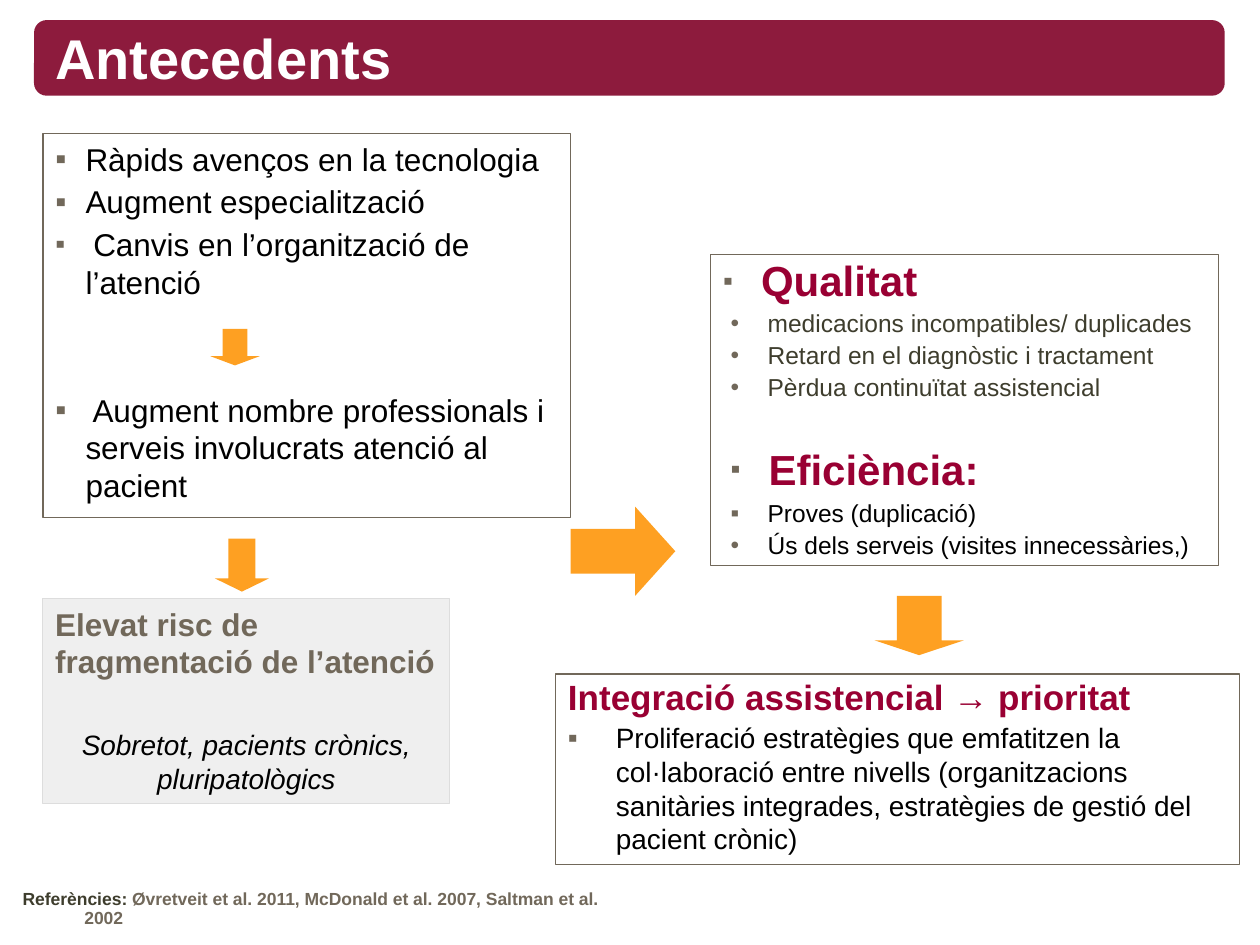
from lxml import etree
from pptx import Presentation
from pptx import util as u
from pptx.dml import color
from pptx.enum import shapes, text
from pptx.oxml import ns

COLORS = {
    "wine": "8D1B3D", "crimson": "990033", "taupe": "71685A", "olive": "3E3D2D",
    "orange": "FEA022", "silver": "C0C0C0", "pale": "DDDDDD",
    "black": "000000", "white": "FFFFFF",
}
COLUMNS, ROWS = 100, 75
CELL = u.Inches(0.1)
SQUARE, DOT = "▪", "•"


def cells(count):
    return u.Emu(round(count * CELL))


def rgb(name):
    return color.RGBColor.from_string(COLORS[name])


def add_panel(page, box, kind=shapes.MSO_SHAPE.RECTANGLE, fill=None, line=None, adjust=()):
    panel = page.shapes.add_shape(kind, *map(cells, box))
    panel.shadow.inherit = False
    for index, value in enumerate(adjust):
        panel.adjustments[index] = value
    if fill:
        panel.fill.solid()
        panel.fill.fore_color.rgb = rgb(fill)
    else:
        panel.fill.background()
    if line:
        panel.line.color.rgb = rgb(line)
        panel.line.width = u.Pt(0.75)
    else:
        panel.line.fill.background()
    panel.text_frame.word_wrap = True
    panel.text_frame.vertical_anchor = text.MSO_ANCHOR.TOP
    return panel


def add_text_box(page, box, anchor):
    frame = page.shapes.add_textbox(*map(cells, box)).text_frame
    frame.word_wrap = True
    frame.vertical_anchor = anchor
    return frame


def add_para(frame, spans, size, bold=False, italic=False, before=0, spacing=None,
             bullet=None, margin=0, hang=0, align=text.PP_ALIGN.LEFT):
    first = frame.paragraphs[0]
    para = frame.add_paragraph() if first.runs else first
    para.alignment = align
    para.space_before = u.Pt(before)
    if spacing:
        para.line_spacing = spacing
    props = para._p.get_or_add_pPr()
    props.set("marL", str(cells(margin)))
    props.set("indent", str(-cells(hang)))
    if bullet:
        tint = etree.SubElement(props, ns.qn("a:buClr"))
        etree.SubElement(tint, ns.qn("a:srgbClr"), val=COLORS["taupe"])
        etree.SubElement(props, ns.qn("a:buFont"), typeface="Arial")
        etree.SubElement(props, ns.qn("a:buChar"), char=bullet)
    para.font.name = "Arial"
    para.font.size = u.Pt(size)
    para.font.bold = bold
    para.font.italic = italic
    for words, tone, *own_size in spans:
        span = para.add_run()
        span.text = words
        span.font.color.rgb = rgb(tone)
        if own_size:
            span.font.size = u.Pt(own_size[0])


def add_title(page, box):
    left, top, width, height = box
    add_panel(page, box, shapes.MSO_SHAPE.ROUNDED_RECTANGLE, "wine", adjust=[0.167])
    frame = add_text_box(page, (left + 0.7, top + 0.8, width - 2.6, height - 1.1),
                         text.MSO_ANCHOR.MIDDLE)
    add_para(frame, [("Antecedents", "white")], 32, bold=True, spacing=0.9)


def add_causes(page, box):
    frame = add_panel(page, box, line="taupe").text_frame
    causes = [
        ([("Ràpids avenços en la tecnologia", "black")], 0),
        ([("Augment especialització", "black")], 2.7),
        ([(" ", "black", 16), ("Canvis en l’organització de l’atenció", "black")], 2.7),
        ([(" Augment nombre professionals i serveis involucrats atenció al pacient",
           "black")], 51.5),
    ]
    for spans, before in causes:
        add_para(frame, spans, 18, before=before, bullet=SQUARE, margin=2.4, hang=2.4)


def add_effects(page, box):
    frame = add_panel(page, box, line="taupe").text_frame

    def heading(words, margin, before):
        add_para(frame, [(" ", "black", 16), (words, "crimson")], 24, bold=True,
                 before=before, spacing=0.9, bullet=SQUARE, margin=margin, hang=2.4)

    def item(words, tone="olive", bullet=DOT, before=1.4, spacing=None):
        add_para(frame, [(" " + words, tone)], 14, before=before, spacing=spacing,
                 bullet=bullet, margin=3, hang=2.4)

    heading("Qualitat", 2.4, 0)
    for words in ("medicacions incompatibles/ duplicades",
                  "Retard en el diagnòstic i tractament",
                  "Pèrdua continuïtat assistencial"):
        item(words)
    heading("Eficiència:", 3, 27)
    item("Proves (duplicació)", "black", SQUARE, 4.2, 0.9)
    item("Ús dels serveis (visites innecessàries,)", "black")


def add_risk(page, box):
    panel = add_panel(page, box, fill="silver", line="pale")
    tint = panel.fill._xPr.find(ns.qn("a:solidFill"))[0]
    etree.SubElement(tint, ns.qn("a:alpha"), val="25000")
    frame = panel.text_frame
    add_para(frame, [("Elevat risc de fragmentació de l’atenció", "taupe")], 18, bold=True)
    add_para(frame, [("Sobretot, pacients crònics, pluripatològics", "black")], 16,
             italic=True, before=27, align=text.PP_ALIGN.CENTER)


def add_priority(page, box):
    frame = add_panel(page, box, line="taupe").text_frame
    add_para(frame, [("Integració assistencial → prioritat", "crimson")], 20,
             bold=True, spacing=0.9)
    add_para(frame, [("Proliferació estratègies que emfatitzen la col·laboració entre nivells "
                      "(organitzacions sanitàries integrades, estratègies de gestió del "
                      "pacient crònic)", "black")], 16, before=1.6,
             bullet=SQUARE, margin=3.8, hang=3.8)


def add_references(page, box):
    frame = add_text_box(page, box, text.MSO_ANCHOR.BOTTOM)
    frame.margin_left = 0
    add_para(frame, [("Referències: ", "olive"),
                     ("Øvretveit et al. 2011, McDonald et al. 2007, Saltman et al. 2002",
                      "taupe")], 10, bold=True, spacing=0.9, margin=4.9, hang=4.9)


def add_arrows(page):
    down, right = shapes.MSO_SHAPE.DOWN_ARROW, shapes.MSO_SHAPE.RIGHT_ARROW
    arrows = [
        (down, (16.7, 26.1, 3.9, 2.9), 0.25, 0),
        (right, (45.3, 40.2, 8.3, 7.1), 0.45, 0),
        (right, (17.1, 42.7, 4.2, 4.3), 0.25, 90),
        (right, (70.6, 46.1, 4.7, 7.1), 0.25, 90),
    ]
    for kind, box, head, turn in arrows:
        arrow = add_panel(page, box, kind, "orange", adjust=[0.5, head])
        arrow.rotation = turn


def main():
    deck = Presentation()
    deck.slide_width, deck.slide_height = cells(COLUMNS), cells(ROWS)
    page = deck.slides.add_slide(deck.slide_layouts[6])
    add_title(page, (2.7, 1.6, 94.5, 6))
    add_effects(page, (56.4, 20.2, 40.3, 24.7))
    add_causes(page, (3.4, 10.6, 41.9, 30.5))
    add_references(page, (1.8, 71.7, 49.3, 2.5))
    add_risk(page, (3.4, 47.5, 32.3, 16.3))
    add_priority(page, (44.1, 53.5, 54.3, 15.1))
    add_arrows(page)
    deck.save("out.pptx")


if __name__ == "__main__":
    main()
